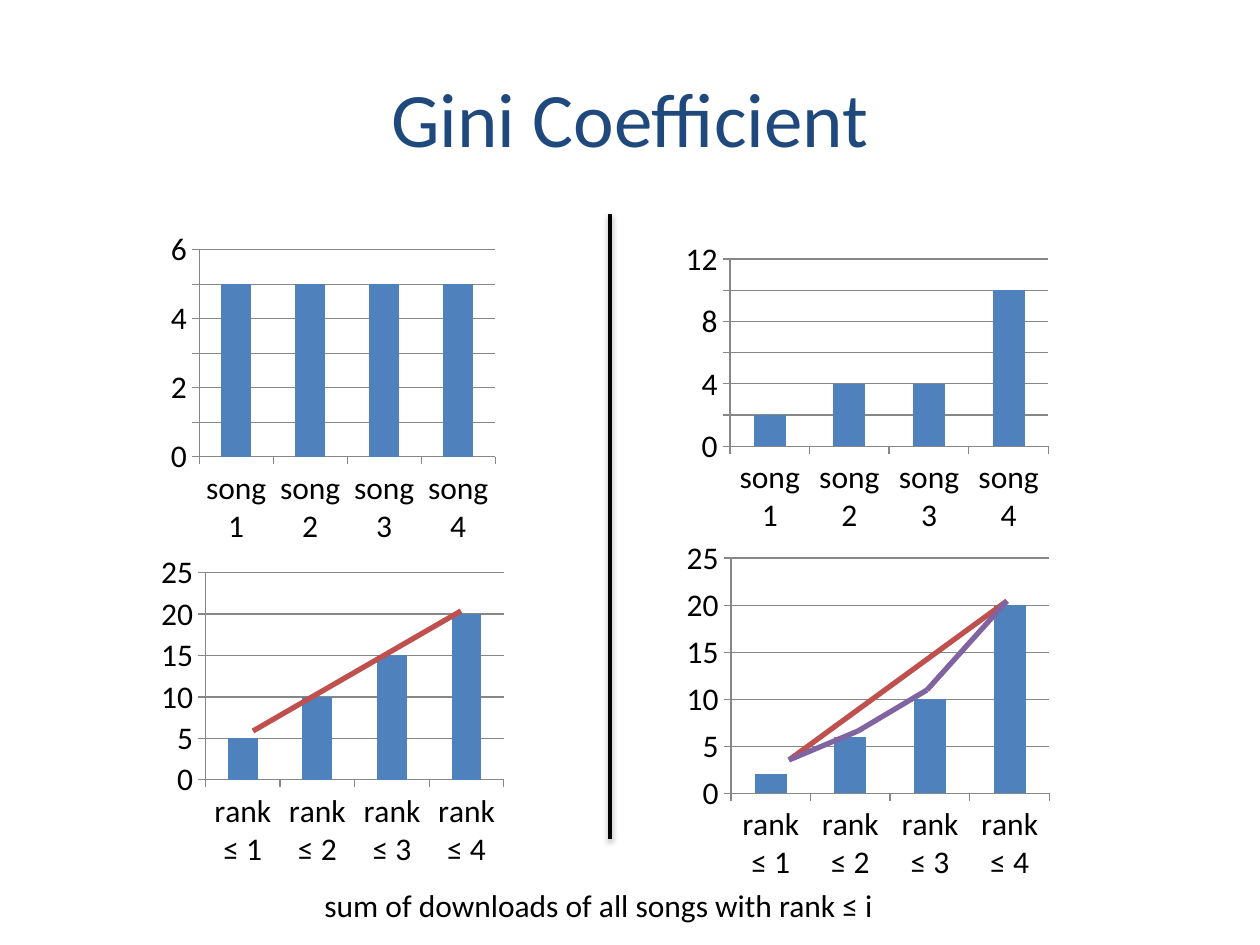
import itertools

import lxml.etree
import pptx
import pptx.chart.data
import pptx.dml.color
import pptx.enum.chart
import pptx.enum.shapes
import pptx.enum.text
import pptx.oxml
import pptx.oxml.ns
import pptx.util

PX = 914400 / 126
FONT = "Calibri"


def color(hex_value):
    return pptx.dml.color.RGBColor.from_string(hex_value)


def box(*lengths):
    return [pptx.util.Emu(round(length * PX)) for length in lengths]


deck = pptx.Presentation()
deck.slide_width, deck.slide_height = box(1260, 945)
slide = deck.slides.add_slide(deck.slide_layouts[6])
shapes = slide.shapes

# Title and caption
alignments = pptx.enum.text.PP_ALIGN
for wording, place, size, ink, alignment in [
    ("Gini Coefficient", (63, 38, 1134, 157), 44, "1F497D", alignments.CENTER),
    ("sum of downloads of all songs with rank ≤ i", (312, 880, 581, 50), 18,
     "000000", alignments.LEFT),
]:
    frame = shapes.add_textbox(*box(*place)).text_frame
    frame.word_wrap = True
    frame.vertical_anchor = pptx.enum.text.MSO_ANCHOR.MIDDLE
    paragraph = frame.paragraphs[0]
    paragraph.alignment = alignment
    run = paragraph.add_run()
    run.text = wording
    run.font.name = FONT
    run.font.size = pptx.util.Pt(size)
    run.font.color.rgb = color(ink)

# Downloads per song (top) and cumulative downloads by rank (bottom)
songs = [f"song {i}" for i in range(1, 5)]
ranks = [f"rank ≤ {i}" for i in range(1, 5)]
kinds = pptx.enum.chart.XL_CHART_TYPE
for place, kind, categories, downloads, top, step in [
    ((164, 224, 338, 328), kinds.COLUMN_CLUSTERED, songs, (5, 5, 5, 5), 6, 1),
    ((154, 547, 357, 328), kinds.COLUMN_STACKED, ranks, (5, 10, 15, 20), 25, 5),
    ((678, 234, 378, 307), kinds.COLUMN_CLUSTERED, songs, (2, 4, 4, 10), 12, 2),
    ((679, 532, 378, 357), kinds.COLUMN_CLUSTERED, ranks, (2, 6, 10, 20), 25, 5),
]:
    chart_data = pptx.chart.data.CategoryChartData()
    chart_data.categories = categories
    chart_data.add_series("Series 1", downloads)
    chart = shapes.add_chart(kind, *box(*place), chart_data).chart
    chart.has_legend = False
    chart.has_title = False
    chart.font.name = FONT
    chart.font.size = pptx.util.Pt(18)
    chart.font.color.rgb = color("000000")

    plot = chart.plots[0]
    plot.vary_by_categories = False
    plot.gap_width = 150
    bars = plot.series[0].format.fill
    bars.solid()
    bars.fore_color.rgb = color("4F81BD")

    scale = chart.value_axis
    scale.minimum_scale, scale.maximum_scale = 0, top
    scale.major_unit = step
    scale.has_major_gridlines = True
    for axis in (chart.category_axis, scale):
        axis.major_tick_mark = pptx.enum.chart.XL_TICK_MARK.OUTSIDE
        axis.minor_tick_mark = pptx.enum.chart.XL_TICK_MARK.NONE
    for ruled in (chart.category_axis, scale, scale.major_gridlines):
        ruled.format.line.color.rgb = color("878787")
        ruled.format.line.width = pptx.util.Pt(0.75)

# Equality lines (red), Lorenz curve (purple) and centre divider (black)
for points, ink, weight in [
    ([(461, 611), (253, 731)], "C0504D", 3),
    ([(1007, 601), (789, 760)], "C0504D", 3),
    ([(789, 760), (858, 731), (927, 690), (1007, 601)], "8064A2", 3),
    ([(610, 214), (610, 839)], "000000", 2),
]:
    for start, end in itertools.pairwise(points):
        segment = shapes.add_connector(
            pptx.enum.shapes.MSO_CONNECTOR.STRAIGHT, *box(*start, *end))
        segment.line.color.rgb = color(ink)
        segment.line.width = pptx.util.Pt(weight)
        effects = lxml.etree.SubElement(
            segment._element.spPr, pptx.oxml.ns.qn("a:effectLst"))

# Soft shadow under the divider, the last line drawn
effects.append(pptx.oxml.parse_xml(
    f'<a:outerShdw {pptx.oxml.ns.nsdecls("a")} blurRad="40000" dist="20000" '
    'dir="5400000" rotWithShape="0"><a:srgbClr val="000000">'
    '<a:alpha val="38000"/></a:srgbClr></a:outerShdw>'))

deck.save("out.pptx")
